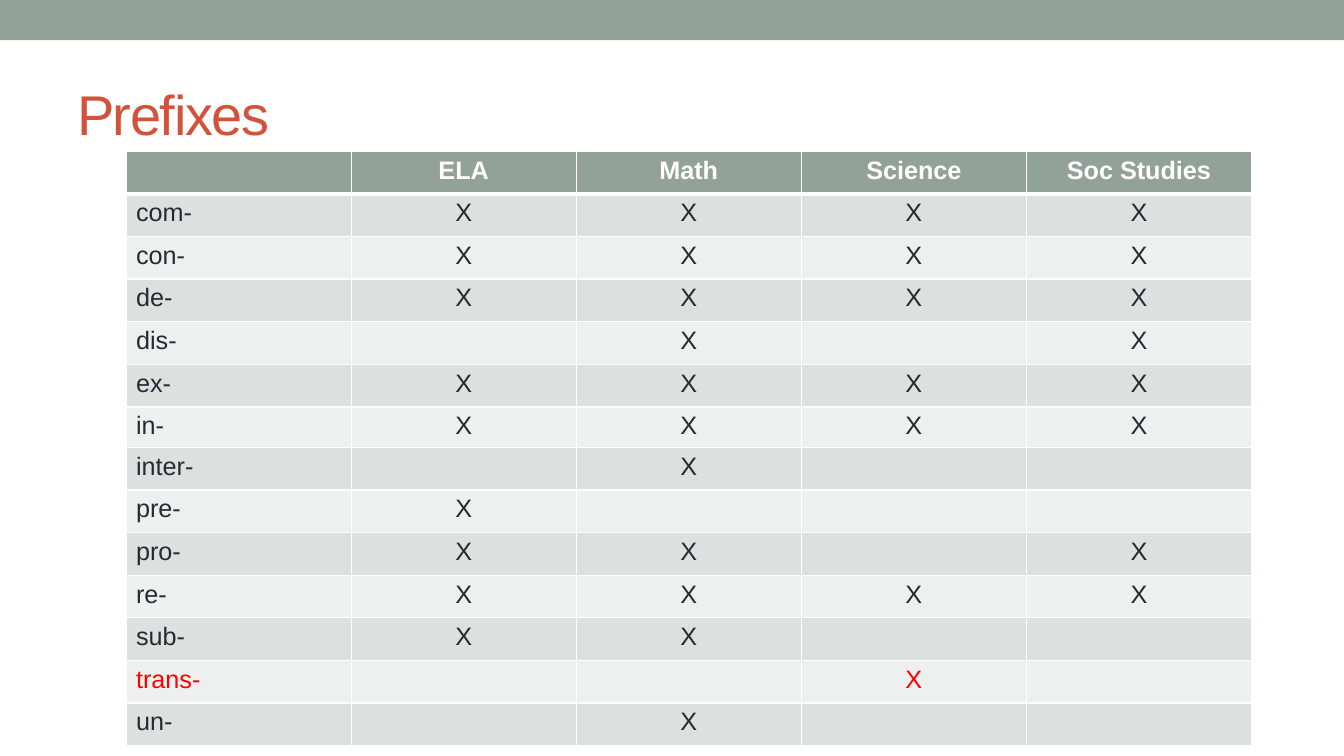
from dataclasses import dataclass

from lxml.etree import SubElement as Sub
from pptx import Presentation
from pptx.dml.color import RGBColor as Rgb
from pptx.enum.shapes import MSO_SHAPE as Shape
from pptx.enum.text import MSO_ANCHOR as Anchor, PP_ALIGN as Align
from pptx.oxml.ns import qn
from pptx.util import Inches, Pt


@dataclass(frozen=True)
class Theme:
    font: str = "Arial"
    sage: str = "93A299"
    rust: str = "D2533C"
    ink: str = "292934"
    red: str = "FF0000"
    white: str = "FFFFFF"
    bands: tuple = ("DCE0DE", "EEF0EF")
    title: int = 40
    body: int = 18


THEME = Theme()
COLS, ROWS = 160, 90
WIDTH, HEIGHT = Inches(13.33), Inches(7.5)
HEADS = ["", "ELA", "Math", "Science", "Soc Studies"]
MARKS = {
    "com-": "1234", "con-": "1234", "de-": "1234", "dis-": "24",
    "ex-": "1234", "in-": "1234", "inter-": "2", "pre-": "1",
    "pro-": "124", "re-": "1234", "sub-": "12", "trans-": "3", "un-": "2",
}
TIGHT, NEW = "in-", "trans-"


def across(cols):
    return round(WIDTH * cols / COLS)


def down(rows):
    return round(HEIGHT * rows / ROWS)


def box(left, top, wide, high):
    return across(left), down(top), across(wide), down(high)


def paint(item, color):
    item.fill.solid()
    item.fill.fore_color.rgb = Rgb.from_string(color)


def style(para, size, color, bold=False):
    font = para.font
    font.name, font.size, font.bold = THEME.font, Pt(size), bold
    font.color.rgb = Rgb.from_string(color)


def add_band(slide):
    band = slide.shapes.add_shape(Shape.RECTANGLE, *box(0, 0, COLS, 4.8))
    band.shadow.inherit = False
    band.line.fill.background()
    paint(band, THEME.sage)


def add_title(slide, text):
    frame = slide.shapes.add_textbox(*box(8, 7, 144, 13)).text_frame
    frame.word_wrap = True
    frame.vertical_anchor = Anchor.MIDDLE
    para = frame.paragraphs[0]
    run = para.add_run()
    run.text = text
    style(para, THEME.title, THEME.rust)
    run.font._element.set("spc", "-100")


def edge(cell, top, bottom):
    props = cell._tc.get_or_add_tcPr()
    sides = {"a:lnL": 1, "a:lnR": 1, "a:lnT": top, "a:lnB": bottom}
    for spot, (tag, width) in enumerate(sides.items()):
        line = Sub(props, qn(tag), w=str(Pt(width)))
        fill = Sub(line, qn("a:solidFill"))
        Sub(fill, qn("a:srgbClr"), val=THEME.white)
        props.insert(spot, line)


def fill_cell(cell, text, back, color, bold, align):
    cell.text = text
    para = cell.text_frame.paragraphs[0]
    para.alignment = align
    style(para, THEME.body, color, bold)
    paint(cell, back)


def add_grid(slide):
    rows = [HEADS]
    for name, marks in MARKS.items():
        rows.append([name] + ["X" if n in marks else "" for n in "1234"])
    frame = slide.shapes.add_table(len(rows), len(HEADS), *box(15, 18, 134, 70))
    table = frame.table
    table.horz_banding = False
    for col in table.columns:
        col.width = across(134 / len(HEADS))
    for r, row in enumerate(rows):
        head = r == 0
        table.rows[r].height = down(3.5 if row[0] == TIGHT else 66 / 13)
        back = THEME.sage if head else THEME.bands[(r - 1) % 2]
        color = THEME.red if row[0] == NEW else THEME.ink
        for c, text in enumerate(row):
            cell = table.cell(r, c)
            align = Align.CENTER if c else Align.LEFT
            fill_cell(cell, text, back, THEME.white if head else color, head, align)
            edge(cell, 3 if r == 1 else 1, 3 if head else 1)


def main():
    deck = Presentation()
    deck.slide_width, deck.slide_height = WIDTH, HEIGHT
    slide = deck.slides.add_slide(deck.slide_layouts[6])
    add_band(slide)
    add_title(slide, "Prefixes")
    add_grid(slide)
    deck.save("out.pptx")


if __name__ == "__main__":
    main()
